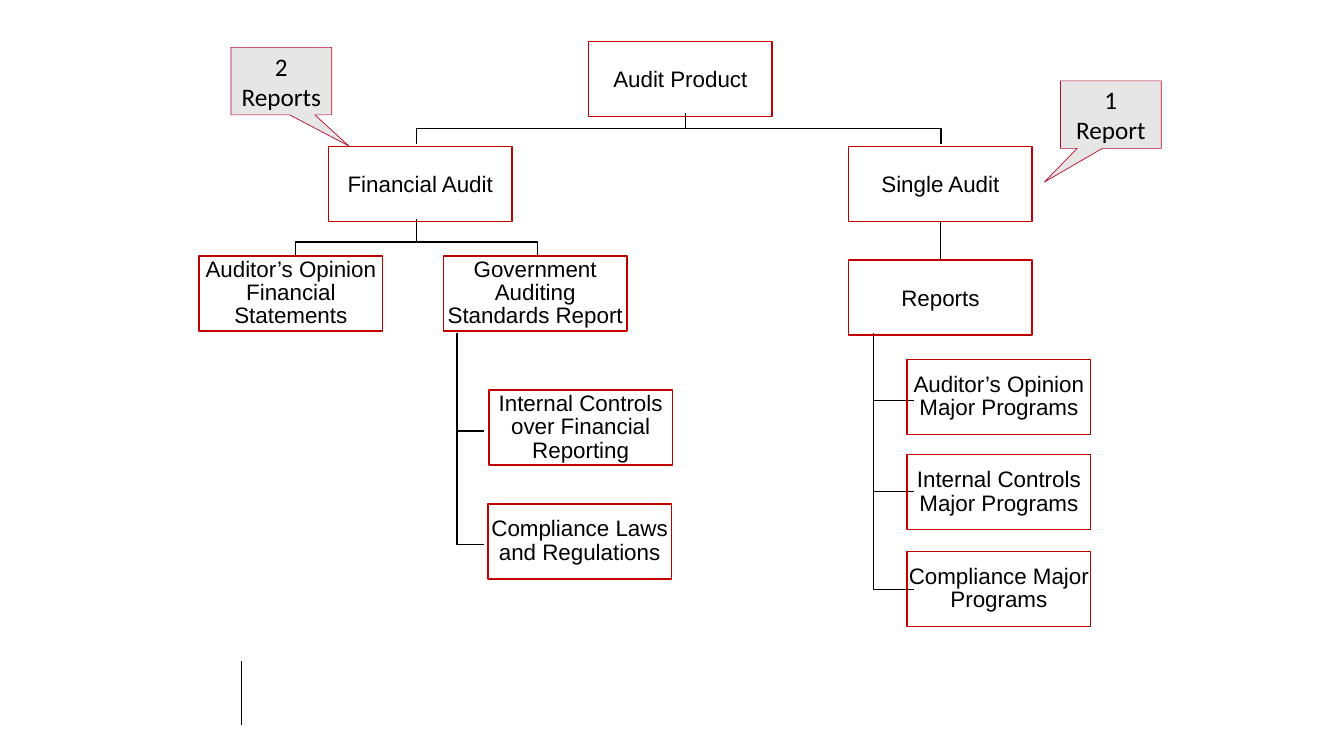
from dataclasses import dataclass

from pptx import Presentation
from pptx.dml.color import RGBColor
from pptx.enum.shapes import MSO_CONNECTOR as Connector, MSO_SHAPE as Preset
from pptx.enum.text import MSO_ANCHOR as Anchor, PP_ALIGN as Align
from pptx.oxml.ns import qn
from pptx.shapes.autoshape import Shape
from pptx.util import Inches, Pt

BLACK = RGBColor(0x00, 0x00, 0x00)
BOX_RED = RGBColor(0xC0, 0x00, 0x00)
CALLOUT_RED = RGBColor(0xB9, 0x0B, 0x2E)
CALLOUT_GRAY = RGBColor(0xE7, 0xE6, 0xE6)

# The slide is a grid of 100 columns by 100 rows
WIDTH, HEIGHT = Inches(13.33), Inches(7.5)
COLUMN, ROW = WIDTH / 100, HEIGHT / 100
BOX_WIDTH, BOX_HEIGHT = 13.65, 9.93
CALLOUT_WIDTH, CALLOUT_HEIGHT = 7.5, 8.93

Point = tuple[float, float]


@dataclass(frozen=True)
class Box:
    text: str
    left: float
    top: float
    line_spacing: float | None = None

    @property
    def center(self) -> float:
        return self.left + BOX_WIDTH / 2

    @property
    def middle(self) -> float:
        return self.top + BOX_HEIGHT / 2

    @property
    def bottom(self) -> float:
        return self.top + BOX_HEIGHT


@dataclass(frozen=True)
class Callout:
    text: str
    left: float
    top: float
    tip: Point  # offset from the centre, as shares of the callout's size


# Audit products
product = Box("Audit Product", 43.8, 5.47)
financial = Box("Financial Audit", 24.45, 19.36)
single = Box("Single Audit", 63.15, 19.36)
reports = Box("Reports", 63.15, 34.4)

# Financial audit reports
TIGHT = 16.6
statements = Box("Auditor’s Opinion Financial Statements", 14.82, 33.85, TIGHT)
standards = Box("Government Auditing Standards Report", 33.0, 33.85, TIGHT)
standards_parts = [
    Box("Internal Controls over Financial Reporting", 36.38, 51.6, TIGHT),
    Box("Compliance Laws and Regulations", 36.3, 66.65, TIGHT),
]

# Single audit report
reports_parts = [
    Box("Auditor’s Opinion Major Programs", 67.5, 47.55, TIGHT),
    Box("Internal Controls Major Programs", 67.5, 60.15, TIGHT),
    Box("Compliance Major Programs", 67.5, 72.95, TIGHT),
]

callouts = [
    Callout("2\nReports", 17.18, 6.27, (0.67, 0.96)),
    Callout("1\nReport", 78.9, 10.7, (-0.66, 1.0)),
]

deck = Presentation()
deck.slide_width, deck.slide_height = WIDTH, HEIGHT
slide = deck.slides.add_slide(deck.slide_layouts[6])


def write(shape: Shape, text: str, *, font: str, size: float,
          line_spacing: float | None = None) -> None:
    frame = shape.text_frame
    frame.word_wrap = True
    frame.vertical_anchor = Anchor.MIDDLE
    frame.margin_left = frame.margin_right = 0
    frame.margin_top = frame.margin_bottom = 0
    frame.text = text
    for paragraph in frame.paragraphs:
        paragraph.alignment = Align.CENTER
        if line_spacing:
            paragraph.line_spacing = Pt(line_spacing)
        paragraph.font.name = font
        paragraph.font.size = Pt(size)
        paragraph.font.color.rgb = BLACK


def add_preset(preset: Preset, left: float, top: float, width: float,
               height: float, color: RGBColor, weight: float) -> Shape:
    shape = slide.shapes.add_shape(
        preset, round(left * COLUMN), round(top * ROW),
        round(width * COLUMN), round(height * ROW))
    shape.shadow.inherit = False
    shape.fill.background()
    shape.line.color.rgb = color
    shape.line.width = Pt(weight)
    return shape


def draw_box(box: Box) -> None:
    shape = add_preset(Preset.RECTANGLE, box.left, box.top, BOX_WIDTH,
                       BOX_HEIGHT, BOX_RED, 1)
    write(shape, box.text, font="Arial", size=16,
          line_spacing=box.line_spacing)


def draw_callout(callout: Callout) -> None:
    shape = add_preset(Preset.RECTANGULAR_CALLOUT, callout.left, callout.top,
                       CALLOUT_WIDTH, CALLOUT_HEIGHT, CALLOUT_RED, 0.5)
    shape.adjustments[0], shape.adjustments[1] = callout.tip
    shape.fill.solid()
    shape.fill.fore_color.rgb = CALLOUT_GRAY
    write(shape, callout.text, font="Calibri", size=18)


def draw_line(start: Point, end: Point, weight: float) -> None:
    line = slide.shapes.add_connector(
        Connector.STRAIGHT, round(start[0] * COLUMN), round(start[1] * ROW),
        round(end[0] * COLUMN), round(end[1] * ROW))
    line.line.color.rgb = BLACK
    line.line.width = Pt(weight)
    properties = line._element.spPr
    properties.append(properties.makeelement(qn("a:effectLst"), {}))


def draw_branches(branches: list[list[Point]]) -> None:
    builder = slide.shapes.build_freeform(*branches[0][0],
                                          scale=(COLUMN, ROW))
    for index, (start, *bends) in enumerate(branches):
        if index:
            builder.move_to(*start)
        builder.add_line_segments(bends, close=False)
    shape = builder.convert_to_shape()
    shape.shadow.inherit = False
    shape.fill.background()
    shape.line.color.rgb = BLACK
    shape.line.width = Pt(1)


def spread_below(parent: Box, children: list[Box]) -> None:
    bus = (parent.bottom + children[0].top) / 2
    draw_branches([[(parent.center, parent.bottom), (parent.center, bus),
                    (child.center, bus), (child.center, child.top)]
                   for child in children])


def hang_beside(parent: Box, children: list[Box]) -> None:
    trunk = parent.left + BOX_WIDTH / 10
    draw_branches([[(trunk, parent.bottom), (trunk, child.middle),
                    (child.left, child.middle)] for child in children])


# Rule at the foot of the slide
draw_line((17.93, 87.5), (17.93, 95.9), 0.5)

# Branches between the boxes
hang_beside(reports, reports_parts)
draw_line((single.center, single.bottom), (reports.center, reports.top), 1)
hang_beside(standards, standards_parts)
spread_below(financial, [statements, standards])
spread_below(product, [financial, single])

# Boxes and callouts
for box in [product, financial, statements, standards, *standards_parts,
            single, reports, *reports_parts]:
    draw_box(box)
for callout in callouts:
    draw_callout(callout)

deck.save("out.pptx")
